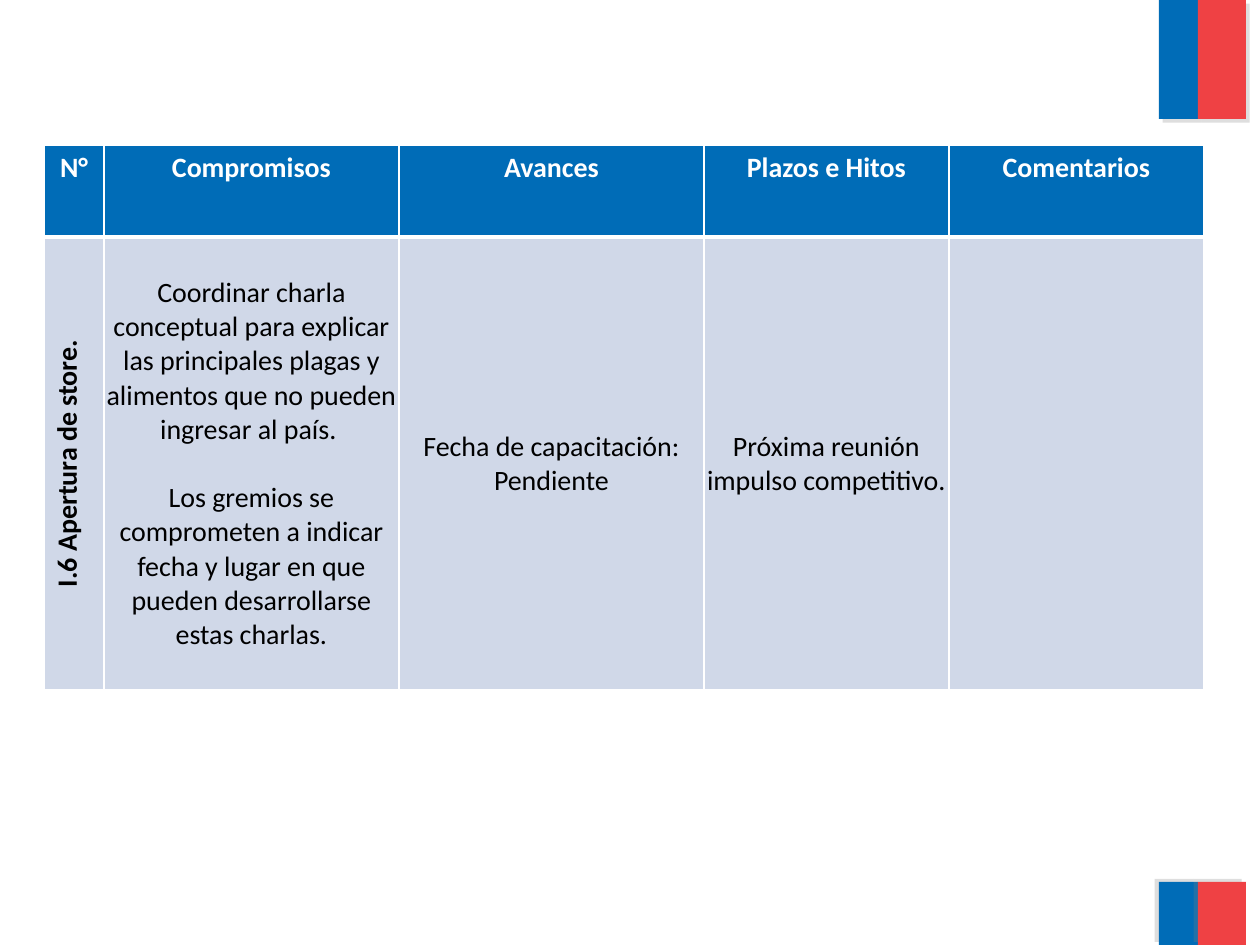
import pptx
import pptx.dml.color
import pptx.enum.shapes
import pptx.enum.text
import pptx.oxml
import pptx.oxml.ns
import pptx.util

PX = 914400 // 126
THEME = {
    "font": "Calibri", "size": 16, "blue": "006CB7", "red": "EF4144",
    "body": "D0D8E8", "white": "FFFFFF", "black": "000000", "shadow": "808080",
    "thin": 1, "thick": 3,
}

HEADERS = ["N°", "Compromisos", "Avances", "Plazos e Hitos", "Comentarios"]
COMMITMENT = [
    ["I.6 Apertura de store."],
    ["Coordinar charla conceptual para explicar las principales plagas y "
     "alimentos que no pueden ingresar al país. ",
     "Los gremios se comprometen a indicar fecha y lugar en que pueden "
     "desarrollarse estas charlas."],
    ["Fecha de capacitación: Pendiente"],
    ["Próxima reunión impulso competitivo."],
    [],
]
COLUMN_WIDTHS = [60, 295, 305, 245, 255]
ROW_HEIGHTS = [92, 453]
TABLE_LEFT, TABLE_TOP = 44, 145

STRIPES = [("blue", 1159, 39), ("red", 1198, 48)]  # colour, left, width
BANDS = [(0, 119, 45), (882, 63, 215)]  # top, height, shadow angle


def px(length):
    return pptx.util.Emu(length * PX)


def rgb(name):
    return pptx.dml.color.RGBColor.from_string(THEME[name])


def add_stripe(slide, color, box, angle):
    shape = slide.shapes.add_shape(
        pptx.enum.shapes.MSO_SHAPE.RECTANGLE, *map(px, box))
    shape.fill.solid()
    shape.fill.fore_color.rgb = rgb(color)
    shape.line.fill.background()
    shape.shadow.inherit = False
    effects = shape._element.spPr.find(pptx.oxml.ns.qn("a:effectLst"))
    effects.append(pptx.oxml.parse_xml(
        f'<a:outerShdw {pptx.oxml.ns.nsdecls("a")} blurRad="0" '
        f'dist="{pptx.util.Pt(3)}" dir="{angle * 60000}" rotWithShape="0">'
        f'<a:srgbClr val="{THEME["shadow"]}"><a:alpha val="25000"/></a:srgbClr>'
        '</a:outerShdw>'))


def set_borders(cell, weights):
    """Draw white borders; weights maps the sides L, R, T, B to theme widths."""
    properties = cell._tc.get_or_add_tcPr()
    for position, (side, weight) in enumerate(weights.items()):
        properties.insert(position, pptx.oxml.parse_xml(
            f'<a:ln{side} {pptx.oxml.ns.nsdecls("a")} '
            f'w="{pptx.util.Pt(THEME[weight])}"><a:solidFill>'
            f'<a:srgbClr val="{THEME["white"]}"/></a:solidFill></a:ln{side}>'))


def fill_cell(cell, paragraphs, fill, color, bold):
    cell.fill.solid()
    cell.fill.fore_color.rgb = rgb(fill)
    frame = cell.text_frame
    for index, text in enumerate(paragraphs):
        paragraph = frame.add_paragraph() if index else frame.paragraphs[0]
        paragraph.alignment = pptx.enum.text.PP_ALIGN.CENTER
        if index:
            paragraph.space_before = pptx.util.Pt(19.5)
        run = paragraph.add_run()
        run.text = text
        font_format = {"name": THEME["font"], "bold": bold,
                       "size": pptx.util.Pt(THEME["size"])}
        for attribute, value in font_format.items():
            setattr(run.font, attribute, value)
        run.font.color.rgb = rgb(color)


def add_commitments_table(slide):
    table = slide.shapes.add_table(
        len(ROW_HEIGHTS), len(COLUMN_WIDTHS), px(TABLE_LEFT), px(TABLE_TOP),
        px(sum(COLUMN_WIDTHS)), px(sum(ROW_HEIGHTS))).table
    table.horz_banding = False
    for column, width in zip(table.columns, COLUMN_WIDTHS):
        column.width = px(width)
    for row, height in zip(table.rows, ROW_HEIGHTS):
        row.height = px(height)

    body_format = {
        "vertical_anchor": pptx.enum.text.MSO_ANCHOR.MIDDLE,
        "margin_left": px(1), "margin_right": px(1),
        "margin_top": px(1), "margin_bottom": 0,
    }
    for index, (header, paragraphs) in enumerate(zip(HEADERS, COMMITMENT)):
        header_cell, body_cell = table.cell(0, index), table.cell(1, index)
        fill_cell(header_cell, [header], "blue", "white", True)
        fill_cell(body_cell, paragraphs, "body", "black", index == 0)
        set_borders(header_cell, {"L": "thin", "R": "thin", "T": "thin", "B": "thick"})
        set_borders(body_cell, {"L": "thin", "R": "thin", "T": "thick", "B": "thin"})
        if index == 0:
            body_cell._tc.get_or_add_tcPr().set("vert", "vert270")
        else:
            for attribute, value in body_format.items():
                setattr(body_cell, attribute, value)


def main():
    presentation = pptx.Presentation()
    presentation.slide_width, presentation.slide_height = px(1260), px(945)
    slide = presentation.slides.add_slide(presentation.slide_layouts[6])
    for top, height, angle in BANDS:
        for color, left, width in STRIPES:
            add_stripe(slide, color, (left, top, width, height), angle)
    add_commitments_table(slide)
    presentation.save("out.pptx")


if __name__ == "__main__":
    main()
